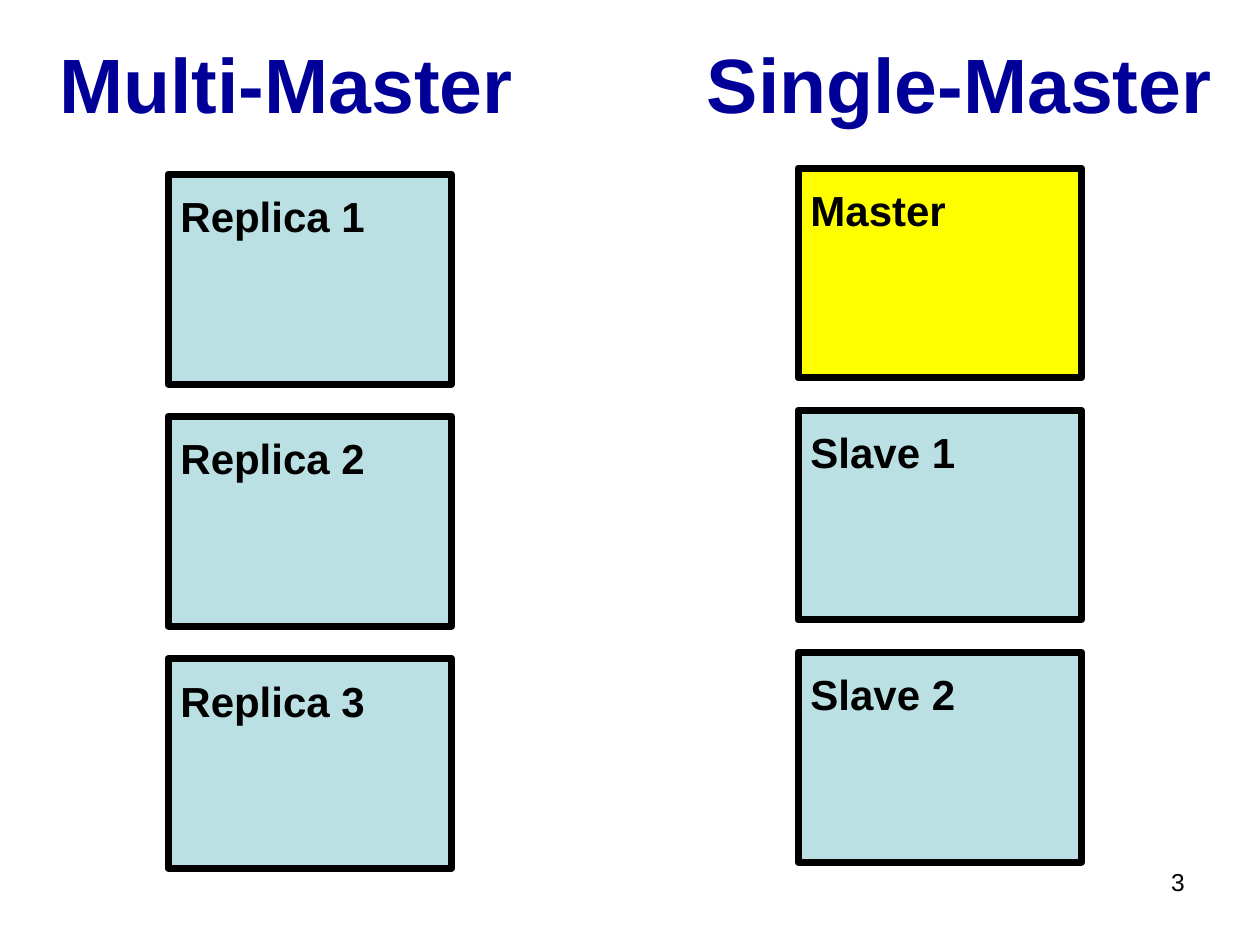
from lxml.etree import SubElement
from pptx import Presentation
from pptx.dml.color import RGBColor
from pptx.enum.shapes import MSO_SHAPE as Shape
from pptx.enum.text import MSO_ANCHOR as Anchor, PP_ALIGN as Align
from pptx.oxml.ns import qn
from pptx.util import Pt

COLORS = {"title": "000099", "text": "000000", "line": "000000",
          "node": "BBE0E3", "master": "FFFF00"}
FONT = "Arial"
BOX_W, BOX_H, PITCH = 162, 120, 138.3

# Each column: left, top, and its (label, fill) nodes from top to bottom
COLUMNS = [
    (96, 99.5, [("Replica 1", "node"), ("Replica 2", "node"), ("Replica 3", "node")]),
    (456, 96, [("Master", "master"), ("Slave 1", "node"), ("Slave 2", "node")]),
]


def color(name):
    return RGBColor.from_string(COLORS[name])


def add_text(sp, text, size, name="text", bold=True, align=Align.LEFT, anchor=Anchor.TOP):
    tf = sp.text_frame
    tf.word_wrap = True
    tf.vertical_anchor = anchor
    p = tf.paragraphs[0]
    p.alignment = align
    r = p.add_run()
    r.text = text
    r.font.name, r.font.size, r.font.bold = FONT, Pt(size), bold
    r.font.color.rgb = color(name)
    return p


def add_title(s, left, right, tab):
    sp = s.shapes.add_textbox(Pt(0), Pt(5), Pt(720), Pt(84))
    sp.text_frame.margin_left = Pt(34)
    sp.text_frame.margin_right = Pt(0)
    p = add_text(sp, f"{left}\t{right}", 44, "title", anchor=Anchor.MIDDLE)
    # A tab stop places the second heading
    tabs = SubElement(p._p.get_or_add_pPr(), qn("a:tabLst"))
    SubElement(tabs, qn("a:tab"), pos=str(Pt(tab)), algn="l")


def add_node(s, x, y, label, fill):
    sp = s.shapes.add_shape(Shape.RECTANGLE, Pt(x), Pt(y), Pt(BOX_W), Pt(BOX_H))
    sp.shadow.inherit = False
    sp.fill.solid()
    sp.fill.fore_color.rgb = color(fill)
    sp.line.color.rgb = color("line")
    sp.line.width = Pt(4)
    sp.text_frame.margin_top = Pt(9.6)
    add_text(sp, label, 24)


def add_page_number(s, number):
    sp = s.shapes.add_textbox(Pt(516), Pt(492), Pt(168), Pt(37.5))
    add_text(sp, number, 14, bold=False, align=Align.RIGHT)


def main():
    prs = Presentation()
    prs.slide_width, prs.slide_height = Pt(720), Pt(540)
    s = prs.slides.add_slide(prs.slide_layouts[6])

    add_title(s, "Multi-Master", "Single-Master", 370)

    # Two columns of three servers
    for x, top, nodes in COLUMNS:
        for i, (label, fill) in enumerate(nodes):
            add_node(s, x, top + i * PITCH, label, fill)

    add_page_number(s, "3")
    prs.save("out.pptx")


if __name__ == "__main__":
    main()
